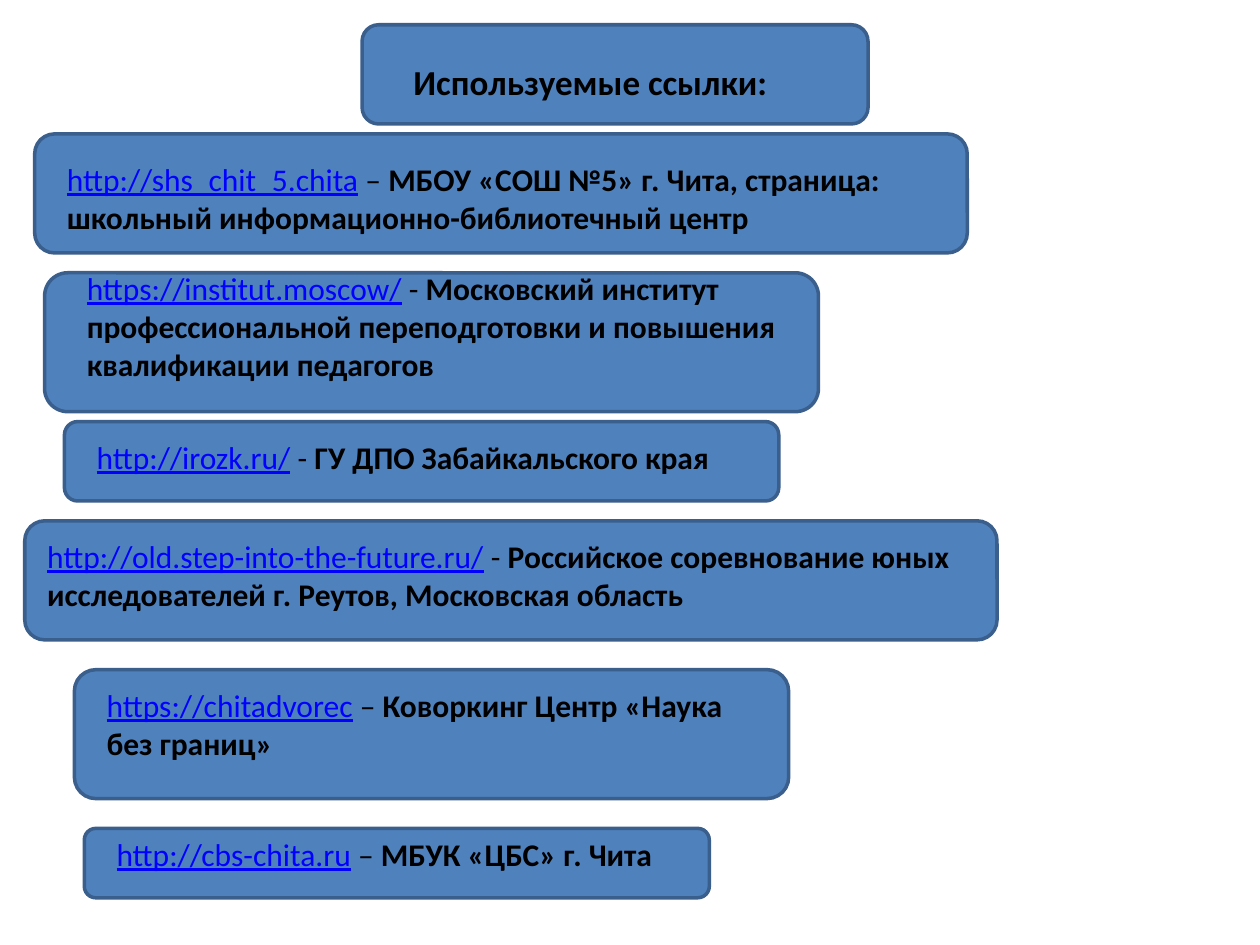
from pptx import Presentation
from pptx.dml.color import RGBColor
from pptx.enum.shapes import MSO_SHAPE
from pptx.enum.text import MSO_ANCHOR, PP_ALIGN
from pptx.util import Inches, Pt

BLUE = RGBColor(0x4F, 0x81, 0xBD)
EDGE = RGBColor(0x3A, 0x5F, 0x8C)
LINK = RGBColor(0x00, 0x00, 0xFF)
BLACK = RGBColor(0x00, 0x00, 0x00)

prs = Presentation()
prs.slide_width, prs.slide_height = Inches(10), Inches(7.5)
COL = prs.slide_width / 254
ROW = prs.slide_height / 190.5


def cells(x, y, w, h):
    return round(x * COL), round(y * ROW), round(w * COL), round(h * ROW)


def style(r, size, color, bold=False, underline=False):
    r.font.name = "Calibri"
    r.font.size = Pt(size)
    r.font.color.rgb = color
    r.font.bold = bold
    r.font.underline = underline


s = prs.slides.add_slide(prs.slide_layouts[5])

cards = [
    (73, 5, 102, 20),
    (7, 27, 188, 24),
    (9, 55, 156, 28),
    (13, 85, 144, 16),
    (5, 105, 196, 24),
    (15, 135, 144, 26),
    (17, 167, 126, 14),
]
for card in cards:
    sp = s.shapes.add_shape(MSO_SHAPE.ROUNDED_RECTANGLE, *cells(*card))
    sp.shadow.inherit = False
    sp.fill.solid()
    sp.fill.fore_color.rgb = BLUE
    sp.line.color.rgb = EDGE
    sp.line.width = Pt(2)

title = s.shapes.title
title.left, title.top, title.width, title.height = cells(12, 11, 214, 11)
tf = title.text_frame
tf.text = "Используемые ссылки:"
tf.vertical_anchor = MSO_ANCHOR.TOP
p = tf.paragraphs[0]
p.alignment = PP_ALIGN.CENTER
style(p.runs[0], 20, BLACK, bold=True)
s.shapes._spTree.append(title._element)

links = [
    ((11, 31, 186, 26), "http://shs_chit_5.chita", " – ",
     "МБОУ «СОШ №5» г. Чита, страница: школьный информационно-библиотечный центр"),
    ((15, 53, 174, 26), "https://institut.moscow/", " - ",
     "Московский институт профессиональной переподготовки и повышения квалификации педагогов"),
    ((17, 87, 146, 10), "http://irozk.ru/", " - ",
     "ГУ ДПО Забайкальского края"),
    ((7, 107, 190, 18), "http://old.step-into-the-future.ru/", " - ",
     "Российское соревнование юных исследователей г. Реутов, Московская область"),
    ((19, 137, 136, 18), "https://chitadvorec", " – ",
     "Коворкинг Центр «Наука без границ»"),
    ((21, 167, 158, 10), "http://cbs-chita.ru", " – ",
     "МБУК «ЦБС» г. Чита"),
]
for box, address, dash, owner in links:
    tf = s.shapes.add_textbox(*cells(*box)).text_frame
    tf.word_wrap = True
    p = tf.paragraphs[0]
    for text, color, bold, underline in (
        (address, LINK, False, True),
        (dash, BLACK, False, False),
        (owner, BLACK, True, False),
    ):
        r = p.add_run()
        r.text = text
        style(r, 18, color, bold, underline)

prs.save("out.pptx")
